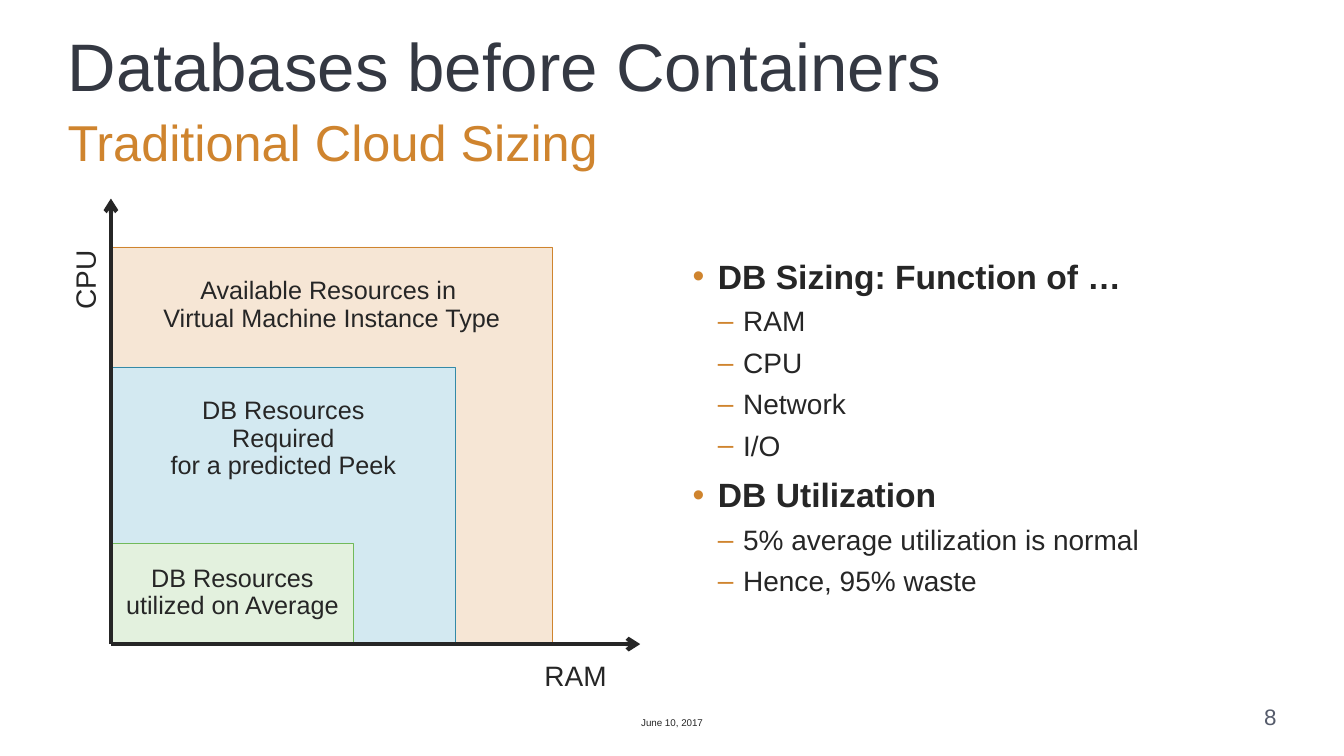
from dataclasses import dataclass

from lxml import etree
from pptx import Presentation
from pptx.dml.color import RGBColor
from pptx.enum.shapes import MSO_CONNECTOR, MSO_SHAPE
from pptx.enum.text import MSO_ANCHOR, MSO_AUTO_SIZE, PP_ALIGN
from pptx.oxml.ns import qn
from pptx.util import Inches, Pt

RECT, LINE = MSO_SHAPE.RECTANGLE, MSO_CONNECTOR.STRAIGHT
TOP, MIDDLE, BOTTOM = MSO_ANCHOR.TOP, MSO_ANCHOR.MIDDLE, MSO_ANCHOR.BOTTOM
LEFT, CENTER, RIGHT = PP_ALIGN.LEFT, PP_ALIGN.CENTER, PP_ALIGN.RIGHT
FIT = MSO_AUTO_SIZE.NONE

FONT = "Arial"
INK = RGBColor(0x26, 0x26, 0x26)
SLATE = RGBColor(0x34, 0x38, 0x42)
GRAY = RGBColor(0x55, 0x5B, 0x6B)
AMBER = RGBColor(0xCF, 0x84, 0x2E)
TEAL = RGBColor(0x34, 0x8A, 0xA7)
GREEN = RGBColor(0x71, 0xBA, 0x5B)
PEACH = RGBColor(0xF6, 0xE6, 0xD5)
SKY = RGBColor(0xD3, 0xE9, 0xF1)
MINT = RGBColor(0xE3, 0xF1, 0xDE)

# Origin of the sizing chart
AXIS_X, AXIS_Y = 1.1, 6.39


@dataclass
class Box:
    lines: list[str]
    top: float
    width: float
    height: float
    fill: RGBColor
    edge: RGBColor
    inset: float = 0.31
    anchor: MSO_ANCHOR = TOP


@dataclass
class Label:
    text: str
    at: tuple[float, float, float, float]
    size: float
    color: RGBColor = INK
    align: PP_ALIGN = CENTER
    anchor: MSO_ANCHOR = MIDDLE
    turn: float = 0


@dataclass
class Level:
    mark: str
    size: float
    gap: float
    bold: bool


BOXES = [
    Box(["Available Resources in \vVirtual Machine Instance Type"],
        2.45, 4.38, 3.92, PEACH, AMBER),
    Box(["DB Resources", "Required", "for a predicted Peek"],
        3.64, 3.42, 2.75, SKY, TEAL),
    Box(["DB Resources utilized on Average"],
        5.39, 2.41, 0.98, MINT, GREEN, 0.05, MIDDLE),
]
LABELS = [
    Label("CPU", (0.36, 2.59, 1, 0.38), 20, turn=270),
    Label("RAM", (5.21, 6.53, 1, 0.39), 20),
    Label("June 10, 2017", (6.12, 7, 1.09, 0.23), 7, anchor=BOTTOM),
    Label("8", (12.08, 7, 0.58, 0.25), 16, GRAY, RIGHT, BOTTOM),
]
LEVELS = [Level("•", 24, 12, True), Level("–", 20, 8, False)]
POINTS = [
    (0, "DB Sizing: Function of …"),
    (1, "RAM"),
    (1, "CPU"),
    (1, "Network"),
    (1, "I/O"),
    (0, "DB Utilization"),
    (1, "5% average utilization is normal"),
    (1, "Hence, 95% waste"),
]


def style(para, text: str, *, size: float, color: RGBColor = INK,
          bold: bool = False, align: PP_ALIGN = LEFT, gap: float = 0) -> None:
    para.text = text
    para.alignment = align
    para.line_spacing = 0.9
    para.space_before = Pt(gap)
    for run in para.runs:
        font = run.font
        font.name, font.size, font.bold = FONT, Pt(size), bold
        font.color.rgb = color


def frame(shape, *, anchor: MSO_ANCHOR = TOP, wrap: bool = True,
          side: float = 0, top: float = 0, base: float = 0):
    text = shape.text_frame
    text.auto_size, text.word_wrap = FIT, wrap
    text.vertical_anchor = anchor
    text.margin_left = text.margin_right = Inches(side)
    text.margin_top, text.margin_bottom = Inches(top), Inches(base)
    return text


def place(shape, left: float, top: float, width: float, height: float) -> None:
    shape.left, shape.top = Inches(left), Inches(top)
    shape.width, shape.height = Inches(width), Inches(height)


def head(shape, text: str, top: float, height: float, size: float,
         color: RGBColor) -> None:
    place(shape, 0.67, top, 12, height)
    para = frame(shape).paragraphs[0]
    style(para, text, size=size, color=color)
    props = para._p.get_or_add_pPr()
    props.set("marL", "0")
    props.set("indent", "0")
    etree.SubElement(props, qn("a:buNone"))


def bullet(para, mark: str, level: int) -> None:
    para.level = level
    props = para._p.get_or_add_pPr()
    props.set("marL", str(Inches(0.25 * (level + 1))))
    props.set("indent", str(Inches(-0.25)))
    tint = etree.SubElement(props, qn("a:buClr"))
    etree.SubElement(tint, qn("a:srgbClr"), val=str(AMBER))
    etree.SubElement(props, qn("a:buChar"), char=mark)


def points(shape) -> None:
    place(shape, 6.87, 2.58, 5.8, 4.75)
    text = frame(shape)
    for i, (level, words) in enumerate(POINTS):
        para = text.add_paragraph() if i else text.paragraphs[0]
        look = LEVELS[level]
        style(para, words, size=look.size, bold=look.bold,
              gap=look.gap if i else 0)
        bullet(para, look.mark, level)


def draw_box(slide, box: Box) -> None:
    shape = slide.shapes.add_shape(
        RECT, Inches(AXIS_X), Inches(box.top),
        Inches(box.width), Inches(box.height))
    shape.shadow.inherit = False
    shape.fill.solid()
    shape.fill.fore_color.rgb = box.fill
    shape.line.color.rgb = box.edge
    shape.line.width = Pt(0.5)
    text = frame(shape, anchor=box.anchor, side=0.1, top=box.inset, base=0.05)
    for i, line in enumerate(box.lines):
        para = text.add_paragraph() if i else text.paragraphs[0]
        style(para, line, size=18, align=CENTER)


def draw_label(slide, label: Label) -> None:
    shape = slide.shapes.add_textbox(*map(Inches, label.at))
    shape.rotation = label.turn
    text = frame(shape, anchor=label.anchor, wrap=False)
    style(text.paragraphs[0], label.text, size=label.size,
          color=label.color, align=label.align)


def draw_axis(slide, end_x: float, end_y: float) -> None:
    axis = slide.shapes.add_connector(
        LINE, Inches(AXIS_X), Inches(AXIS_Y), Inches(end_x), Inches(end_y))
    axis.line.color.rgb = INK
    axis.line.width = Pt(3)
    etree.SubElement(axis.line._get_or_add_ln(), qn("a:tailEnd"), type="arrow")
    etree.SubElement(axis._element.spPr, qn("a:effectLst"))


def main() -> None:
    deck = Presentation()
    deck.slide_width, deck.slide_height = Inches(13.33), Inches(7.5)
    slide = deck.slides.add_slide(deck.slide_layouts[3])

    # Headings and list
    title, sub, body = slide.placeholders
    head(title, "Databases before Containers", 0.33, 0.75, 48, SLATE)
    head(sub, "Traditional Cloud Sizing", 1.17, 0.58, 36, AMBER)
    points(body)

    # Nested resource areas, labels and axes
    for box in BOXES:
        draw_box(slide, box)
    for label in LABELS:
        draw_label(slide, label)
    draw_axis(slide, AXIS_X, 1.97)
    draw_axis(slide, 6.35, AXIS_Y)

    deck.save("out.pptx")


if __name__ == "__main__":
    main()
